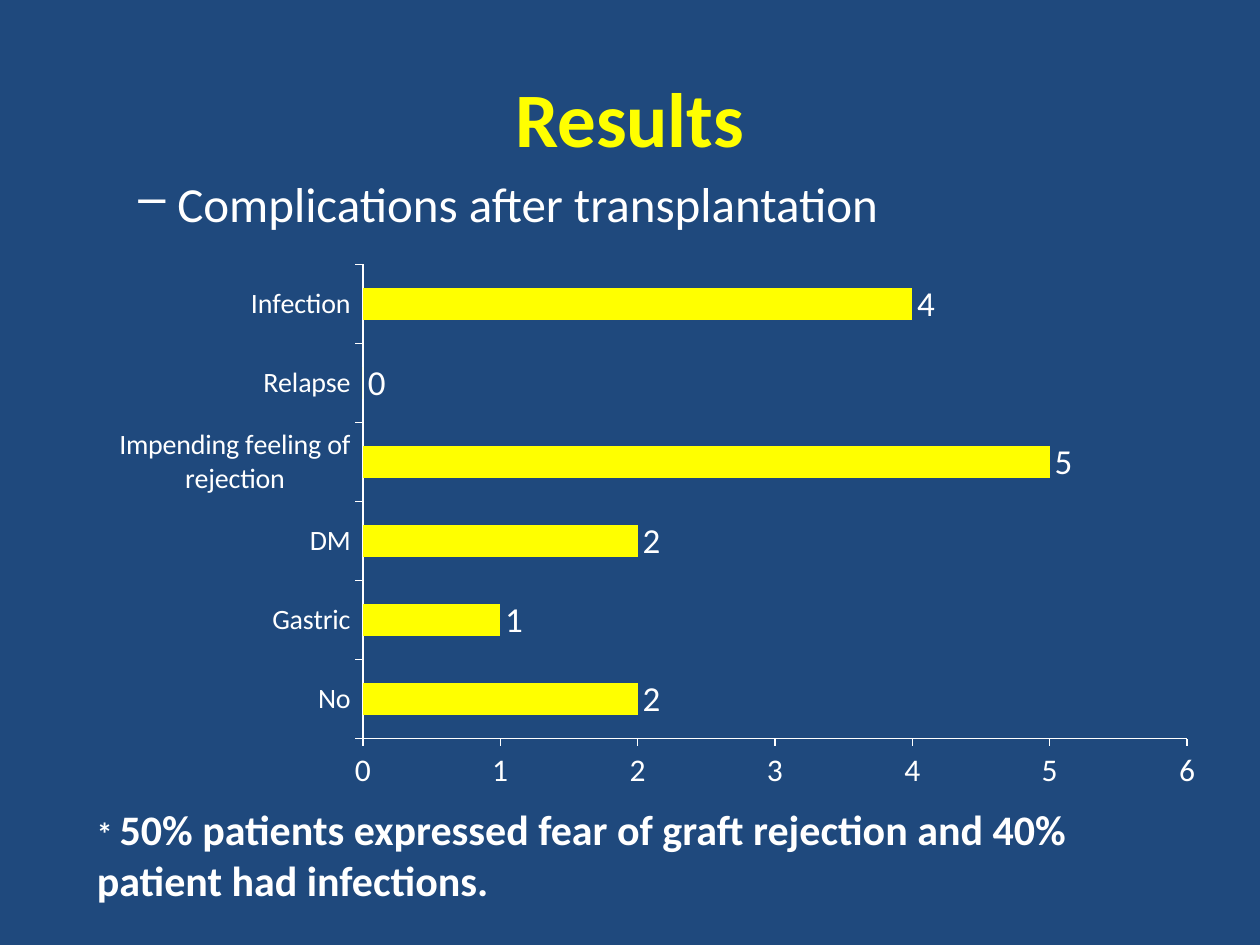
import pptx
import pptx.chart.data
import pptx.dml.color
import pptx.enum.chart
import pptx.enum.text
import pptx.util
from lxml import etree
from pptx.oxml.ns import qn

Inches, Pt = pptx.util.Inches, pptx.util.Pt

FONT = "Calibri"
NAVY, YELLOW, WHITE = "1F497D", "FFFF00", "FFFFFF"

TITLE = "Results"
SUBTITLE = "Complications after transplantation"
FOOTNOTE = [
    ("* ", 18),
    ("50% patients expressed fear of graft rejection and 40% patient had infections.", 24),
]
COMPLICATIONS = [
    ("No", 2),
    ("Gastric", 1),
    ("DM", 2),
    ("Impending feeling of rejection", 5),
    ("Relapse", 0),
    ("Infection", 4),
]
PLOT_AREA = {"x": 0.25, "y": 0.04, "w": 0.74, "h": 0.84}  # fractions of the chart


def rgb(color):
    return pptx.dml.color.RGBColor.from_string(color)


def set_fill(fill, color):
    fill.solid()
    fill.fore_color.rgb = rgb(color)


def set_font(font, size, color=WHITE, bold=False):
    font.name = FONT
    font.size = Pt(size)
    font.bold = bold
    font.color.rgb = rgb(color)


def add_text(slide, box, runs, color=WHITE, bold=False):
    """Add a one-paragraph text box from (text, size) runs."""
    frame = slide.shapes.add_textbox(*map(Inches, box)).text_frame
    frame.word_wrap = True
    paragraph = frame.paragraphs[0]
    set_font(paragraph.font, runs[0][1], color, bold)
    for text, size in runs:
        run = paragraph.add_run()
        run.text = text
        set_font(run.font, size, color, bold)
    return frame


def set_dash_bullet(paragraph, margin, indent):
    properties = paragraph._p.get_or_add_pPr()
    properties.set("marL", str(Inches(margin)))
    properties.set("indent", str(Inches(indent)))
    bullet = etree.Element(qn("a:buChar"), char="–")
    properties.insert_element_before(bullet, "a:tabLst", "a:defRPr", "a:extLst")


def set_plot_area(chart, area):
    plot_area = chart._chartSpace.chart.plotArea
    layout = plot_area.find(qn("c:layout"))
    if layout is None:
        layout = etree.Element(qn("c:layout"))
        plot_area.insert(0, layout)
    manual = etree.SubElement(layout, qn("c:manualLayout"))
    settings = {"layoutTarget": "inner", "xMode": "edge", "yMode": "edge", **area}
    for name, value in settings.items():
        etree.SubElement(manual, qn(f"c:{name}"), val=str(value))


def add_complications_chart(slide):
    data = pptx.chart.data.CategoryChartData()
    data.categories = [name for name, _ in COMPLICATIONS]
    data.add_series("Series 1", [count for _, count in COMPLICATIONS])
    chart = slide.shapes.add_chart(
        pptx.enum.chart.XL_CHART_TYPE.BAR_CLUSTERED,
        *map(Inches, (0.67, 1.92, 8.84, 4.48)), data).chart
    chart.has_title = False
    chart.has_legend = False
    set_font(chart.font, 10)
    set_plot_area(chart, PLOT_AREA)

    for axis, size in ((chart.category_axis, 16), (chart.value_axis, 18)):
        axis.has_major_gridlines = False
        axis.major_tick_mark = pptx.enum.chart.XL_TICK_MARK.OUTSIDE
        axis.format.line.color.rgb = rgb(WHITE)
        axis.format.line.width = Pt(0.75)
        set_font(axis.tick_labels.font, size)
    chart.value_axis.minimum_scale = 0
    chart.value_axis.maximum_scale = 6
    chart.value_axis.major_unit = 1

    plot = chart.plots[0]
    plot.gap_width = 150
    plot.vary_by_categories = False
    set_fill(plot.series[0].format.fill, YELLOW)
    plot.has_data_labels = True
    labels = plot.data_labels
    labels.show_value = True
    labels.position = pptx.enum.chart.XL_LABEL_POSITION.OUTSIDE_END
    set_font(labels.font, 20)


presentation = pptx.Presentation()
presentation.slide_width = Inches(10)
presentation.slide_height = Inches(7.5)
slide = presentation.slides.add_slide(presentation.slide_layouts[6])
set_fill(slide.background.fill, NAVY)

title = add_text(slide, (0.5, 0.3, 9, 1.25), [(TITLE, 44)], YELLOW, bold=True)
title.vertical_anchor = pptx.enum.text.MSO_ANCHOR.MIDDLE
title.paragraphs[0].alignment = pptx.enum.text.PP_ALIGN.CENTER

add_complications_chart(slide)

add_text(slide, (0.67, 6.33, 8.42, 0.91), FOOTNOTE, bold=True)

subtitle = add_text(slide, (0.5, 1.33, 9, 5.37), [(SUBTITLE, 28)]).paragraphs[0]
subtitle.level = 1
subtitle.space_before = Pt(5.6)
set_dash_bullet(subtitle, 0.81, -0.31)

presentation.save("out.pptx")
